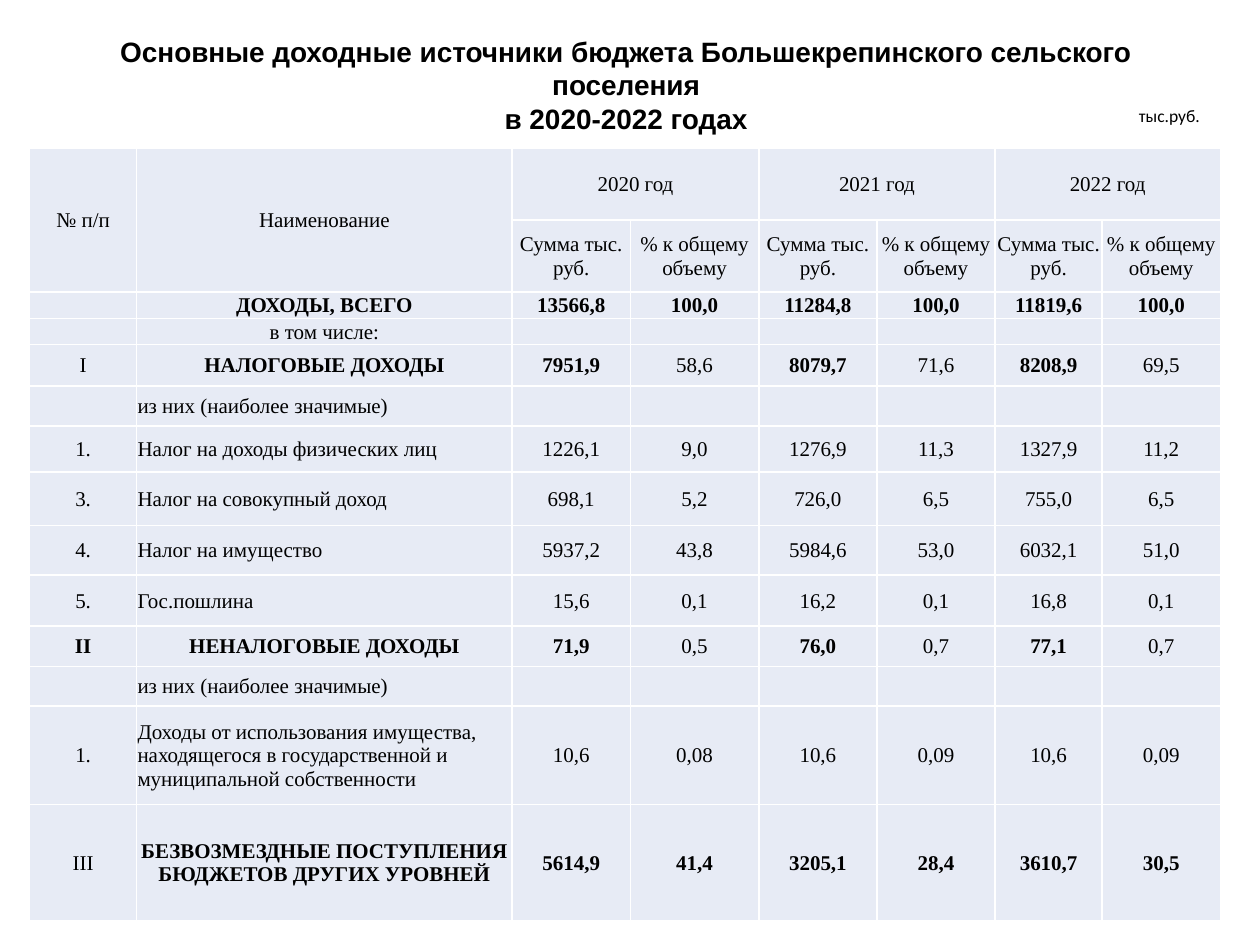
from lxml.etree import SubElement
from pptx import Presentation
from pptx.dml.color import RGBColor
from pptx.enum.text import MSO_ANCHOR as Anchor, PP_ALIGN as Align
from pptx.oxml.ns import qn
from pptx.util import Pt

BLACK = RGBColor(0x00, 0x00, 0x00)
CELL_FILL = RGBColor(0xE7, 0xEB, 0xF5)
BORDER = RGBColor(0xFF, 0xFF, 0xFF)


def write(frame, text, font="Times New Roman", size=12, bold=False, align=Align.CENTER):
    frame.word_wrap = True
    paragraph = frame.paragraphs[0]
    paragraph.alignment = align
    if not text:
        # Keep empty cells as low as the filled ones
        SubElement(paragraph._p, qn("a:endParaRPr"), sz=str(size * 100))
        return
    paragraph.text = text
    for run in paragraph.runs:
        run.font.name = font
        run.font.size = Pt(size)
        run.font.bold = bold
        run.font.color.rgb = BLACK


def add_borders(cell):
    properties = cell._tc.get_or_add_tcPr()
    for side in ("lnL", "lnR", "lnT", "lnB"):
        line = SubElement(properties, qn(f"a:{side}"), w=str(Pt(1)))
        fill = SubElement(line, qn("a:solidFill"))
        SubElement(fill, qn("a:srgbClr"), val=str(BORDER))


presentation = Presentation()
presentation.slide_width = Pt(720)
presentation.slide_height = Pt(540)
slide = presentation.slides.add_slide(presentation.slide_layouts[6])

# Title
title = slide.shapes.add_textbox(Pt(33.8), Pt(17.3), Pt(648), Pt(62))
title.text_frame.vertical_anchor = Anchor.MIDDLE
write(title.text_frame,
      "Основные доходные источники бюджета Большекрепинского сельского поселения"
      "\vв 2020-2022 годах",
      font="Arial", size=16, bold=True)

# Unit of measure
unit = slide.shapes.add_textbox(Pt(568), Pt(56.2), Pt(124.6), Pt(19.4))
write(unit.text_frame, "тыс.руб.", font="Calibri", size=10, align=Align.RIGHT)

# Table contents
SUBHEADS = ["Сумма тыс. руб.", "% к общему объему"]
BLANKS = [""] * 6
SIGNIFICANT = "из них (наиболее значимые)"
rows = [
    ["№ п/п", "Наименование", "2020 год", "", "2021 год", "", "2022 год", ""],
    ["", "", *SUBHEADS * 3],
    ["", "ДОХОДЫ, ВСЕГО", "13566,8", "100,0", "11284,8", "100,0", "11819,6", "100,0"],
    ["", "в том числе:", *BLANKS],
    ["I", "НАЛОГОВЫЕ ДОХОДЫ", "7951,9", "58,6", "8079,7", "71,6", "8208,9", "69,5"],
    ["", SIGNIFICANT, *BLANKS],
    ["1.", "Налог на доходы физических лиц",
     "1226,1", "9,0", "1276,9", "11,3", "1327,9", "11,2"],
    ["3.", "Налог на совокупный доход", "698,1", "5,2", "726,0", "6,5", "755,0", "6,5"],
    ["4.", "Налог на имущество", "5937,2", "43,8", "5984,6", "53,0", "6032,1", "51,0"],
    ["5.", "Гос.пошлина", "15,6", "0,1", "16,2", "0,1", "16,8", "0,1"],
    ["II", "НЕНАЛОГОВЫЕ ДОХОДЫ", "71,9", "0,5", "76,0", "0,7", "77,1", "0,7"],
    ["", SIGNIFICANT, *BLANKS],
    ["1.", "Доходы от использования имущества, находящегося в государственной "
     "и муниципальной собственности", "10,6", "0,08", "10,6", "0,09", "10,6", "0,09"],
    ["III", "БЕЗВОЗМЕЗДНЫЕ ПОСТУПЛЕНИЯ БЮДЖЕТОВ ДРУГИХ УРОВНЕЙ",
     "5614,9", "41,4", "3205,1", "28,4", "3610,7", "30,5"],
]
column_widths = [61.2, 214.6, 67.5, 73.5, 67.5, 67.5, 61.2, 67.5]
row_heights = [41.3, 41.2, 15, 15, 23.5, 23, 26.2, 30.6, 28.4, 29.2, 23, 22.6, 56.4, 66.6]
amounts_bold = {1, 2, 4, 6}
bold_columns = {2: set(range(1, 8)), 4: amounts_bold, 10: amounts_bold | {0},
                13: set(range(1, 8))}
left_aligned_rows = {5, 6, 7, 8, 9, 11, 12}

# Table grid
table = slide.shapes.add_table(len(rows), len(column_widths), Pt(16.9), Pt(84.5),
                               Pt(sum(column_widths)), Pt(sum(row_heights))).table
for column, width in zip(table.columns, column_widths):
    column.width = Pt(width)
for row, height in zip(table.rows, row_heights):
    row.height = Pt(height)

# Table cells
for row_index, row in enumerate(rows):
    for column_index, text in enumerate(row):
        cell = table.cell(row_index, column_index)
        add_borders(cell)
        cell.fill.solid()
        cell.fill.fore_color.rgb = CELL_FILL
        cell.vertical_anchor = Anchor.MIDDLE
        cell.margin_left = cell.margin_right = cell.margin_top = Pt(0.5)
        cell.margin_bottom = Pt(0)
        is_left = column_index == 1 and row_index in left_aligned_rows
        write(cell.text_frame, text,
              bold=column_index in bold_columns.get(row_index, ()),
              align=Align.LEFT if is_left else Align.CENTER)

# Merged header cells
for column_index in (0, 1):
    table.cell(0, column_index).merge(table.cell(1, column_index))
for column_index in (2, 4, 6):
    table.cell(0, column_index).merge(table.cell(0, column_index + 1))

presentation.save("out.pptx")
